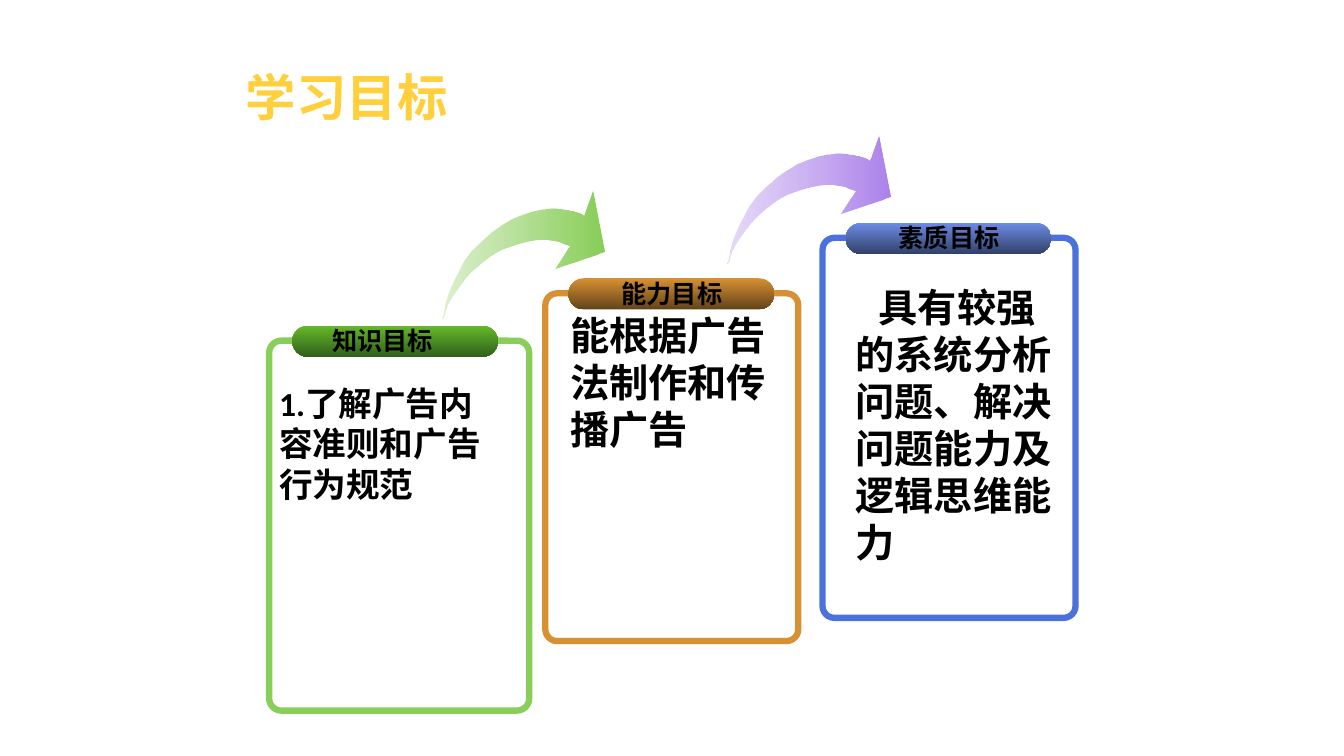
import dataclasses

import lxml.etree
import pptx
import pptx.dml.color
import pptx.enum.shapes
import pptx.enum.text
import pptx.oxml.ns
import pptx.util

CELL = pptx.util.Inches(0.1)
COLUMNS, ROWS = 133.33, 75
COLORS = {
    "title": "FFD03B", "text": "000000",
    "green": "88CE58", "green_top": "66B828", "green_low": "2F611D",
    "orange": "D79133", "orange_low": "634318",
    "blue": "4B71DD", "blue_top": "6D8CE5", "blue_low": "32416A",
    "green_pale": "93D267", "purple_pale": "B48EED", "purple": "AD83EB",
}
SHAPE = pptx.enum.shapes.MSO_SHAPE
ALIGN = pptx.enum.text.PP_ALIGN

ARROW_INNER = [
    (0, 127), (1, 126), (2, 124), (3, 120), (5, 114), (8, 108), (13, 101),
    (18, 94), (23, 87), (31, 79), (39, 72), (48, 65), (59, 59), (70, 55),
    (80, 52), (89, 50), (97, 49), (104, 49), (111, 50), (116, 51),
    (120, 53), (123, 54), (126, 55),
]
ARROW_HEAD = [(111, 78), (161, 61), (149, 0), (140, 25)]
ARROW_OUTER = [
    (139, 24), (137, 23), (135, 22), (131, 21), (126, 20), (120, 19),
    (113, 18), (106, 18), (98, 19), (88, 21), (79, 24), (69, 28), (58, 35),
    (48, 42), (38, 51), (29, 60), (22, 69), (17, 79), (12, 88), (8, 97),
    (5, 105), (3, 112), (2, 118), (1, 123), (0, 126),
]


@dataclasses.dataclass
class Box:
    col: float
    row: float
    cols: float
    rows: float

    def emu(self) -> list[int]:
        return [round(v * CELL) for v in dataclasses.astuple(self)]


@dataclasses.dataclass
class Card:
    frame: Box
    line: str
    tab: tuple[str, str]
    label: str
    label_col: float
    body: str
    body_box: Box
    size: int
    indent: float = 0


@dataclasses.dataclass
class Arrow:
    col: float
    row: float
    fade: tuple[str, str]


CARDS = [
    Card(Box(26.7, 33.8, 25.8, 36.7), "green", ("green_top", "green_low"),
         "知识目标", 31.9, "1.了解广告内容准则和广告行为规范",
         Box(26.7, 37.5, 22.7, 13.1), 24),
    Card(Box(54.1, 29.1, 25.1, 34.5), "orange", ("orange", "orange_low"),
         "能力目标", 60.6, "能根据广告法制作和传播广告",
         Box(55.6, 30.4, 22.7, 15.1), 28),
    Card(Box(81.6, 23.6, 25.1, 37.7), "blue", ("blue_top", "blue_low"),
         "素质目标", 88.1, "具有较强的系统分析问题、解决问题能力及逻辑思维能力",
         Box(83.9, 27.6, 22.7, 33.7), 28, 2.3),
]
ARROWS = [
    Arrow(43.9, 18.9, ("green_pale", "green")),
    Arrow(72.2, 13.4, ("purple_pale", "purple")),
]


def rgb(name: str) -> pptx.dml.color.RGBColor:
    return pptx.dml.color.RGBColor.from_string(COLORS[name])


def apply(target, **values) -> None:
    for name, value in values.items():
        setattr(target, name, value)


def fill_gradient(sp, names: tuple[str, str], angle: int) -> None:
    sp.shadow.inherit = False
    sp.line.fill.background()
    sp.fill.gradient()
    sp.fill.gradient_angle = angle
    for stop, name in zip(sp.fill.gradient_stops, names):
        stop.color.rgb = rgb(name)


def write(tf, text: str, size: int, color: str, font: str, **paragraph) -> None:
    p = tf.paragraphs[0]
    apply(p, **paragraph)
    r = p.add_run()
    r.text = text
    apply(r.font, size=pptx.util.Pt(size), bold=True, name=font)
    r.font.color.rgb = rgb(color)
    ea = lxml.etree.SubElement(r.font._element, pptx.oxml.ns.qn("a:ea"))
    ea.set("typeface", "Noto Sans CJK SC")


def add_rounded(s, box: Box, radius: float):
    sp = s.shapes.add_shape(SHAPE.ROUNDED_RECTANGLE, *box.emu())
    sp.adjustments[0] = radius
    sp.shadow.inherit = False
    return sp


def add_text(s, box: Box, text: str, size: int, wrap: bool, **paragraph) -> None:
    tf = s.shapes.add_textbox(*box.emu()).text_frame
    apply(tf, word_wrap=wrap,
          auto_size=pptx.enum.text.MSO_AUTO_SIZE.SHAPE_TO_FIT_TEXT)
    write(tf, text, size, "text", "Calibri", **paragraph)


def add_frame(s, card: Card) -> None:
    sp = add_rounded(s, card.frame, 0.047)
    sp.fill.background()
    sp.line.color.rgb = rgb(card.line)
    sp.line.width = pptx.util.Pt(4.5)
    tab = Box(card.frame.col + 2.3, card.frame.row - 1.5, 20.4, 3.1)
    fill_gradient(add_rounded(s, tab, 0.5), card.tab, 270)


def add_arrow(s, arrow: Arrow) -> None:
    points = ARROW_INNER + ARROW_HEAD + ARROW_OUTER
    builder = s.shapes.build_freeform(*points[0], scale=CELL / 10)
    builder.add_line_segments(points[1:], close=True)
    sp = builder.convert_to_shape(round(arrow.col * CELL), round(arrow.row * CELL))
    fill_gradient(sp, arrow.fade, 0)
    tint = sp._element.spPr.find(".//" + pptx.oxml.ns.qn("a:srgbClr"))
    lxml.etree.SubElement(tint, pptx.oxml.ns.qn("a:alpha")).set("val", "32000")


def add_card_text(s, card: Card) -> None:
    add_text(s, Box(card.label_col, card.frame.row - 2, 12.1, 4),
             card.label, 18, False, alignment=ALIGN.CENTER)


def add_card_body(s, card: Card) -> None:
    add_text(s, card.body_box, card.body, card.size, True, alignment=ALIGN.LEFT)
    pPr = s.shapes[-1].text_frame.paragraphs[0]._p.get_or_add_pPr()
    pPr.set("indent", str(round(card.indent * CELL)))


def add_title(s) -> None:
    sp = s.shapes.title
    left, top, width, height = Box(23.4, 6.4, 86.6, 7.1).emu()
    apply(sp, left=left, top=top, width=width, height=height)
    sp.text_frame.vertical_anchor = pptx.enum.text.MSO_ANCHOR.MIDDLE
    write(sp.text_frame, "学习目标", 36, "title", "Noto Sans CJK SC",
          alignment=ALIGN.LEFT, line_spacing=0.9)


def main() -> None:
    prs = pptx.Presentation()
    apply(prs, slide_width=round(COLUMNS * CELL), slide_height=ROWS * CELL)
    s = prs.slides.add_slide(prs.slide_layouts[5])
    add_title(s)
    for draw, items in ((add_frame, CARDS), (add_arrow, ARROWS),
                        (add_card_text, CARDS), (add_card_body, CARDS)):
        for item in items:
            draw(s, item)
    prs.save("out.pptx")


if __name__ == "__main__":
    main()
